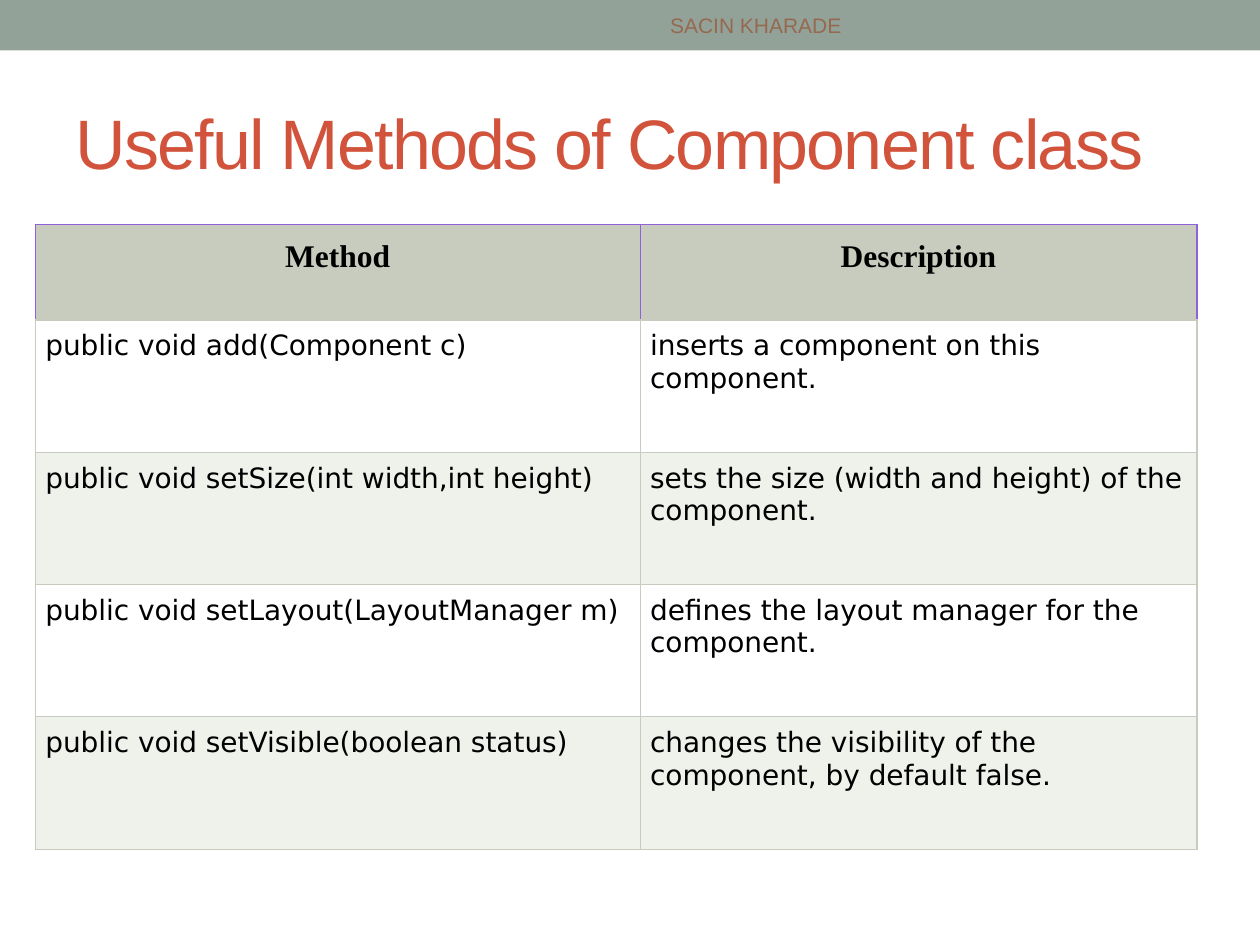
from lxml.etree import SubElement
from pptx import Presentation
from pptx.dml.color import RGBColor
from pptx.enum.shapes import MSO_SHAPE
from pptx.enum.text import MSO_ANCHOR, PP_ALIGN
from pptx.oxml.ns import qn
from pptx.util import Inches, Pt

SAGE = RGBColor(0x93, 0xA2, 0x99)
RED = RGBColor(0xD2, 0x53, 0x3C)
BROWN = RGBColor(0x96, 0x69, 0x4F)
BLACK = RGBColor(0x00, 0x00, 0x00)
WHITE = RGBColor(0xFF, 0xFF, 0xFF)
HEADER_FILL = RGBColor(0xC7, 0xCC, 0xBE)
BAND_FILL = RGBColor(0xEF, 0xF1, 0xEB)
PURPLE = RGBColor(0x90, 0x61, 0xD9)

METHODS = [
    ("Method", "Description"),
    ("public void add(Component c)", "inserts a component on this component."),
    ("public void setSize(int width,int height)",
     "sets the size (width and height) of the component."),
    ("public void setLayout(LayoutManager m)",
     "defines the layout manager for the component."),
    ("public void setVisible(boolean status)",
     "changes the visibility of the component, by default false."),
]
COLUMN_WIDTHS = (4.8, 4.42)
HEADER_HEIGHT, ROW_HEIGHT = 0.76, 1.05


def write_text(text_frame, text, font="Arial", size=16, color=BLACK,
               bold=False, align=PP_ALIGN.LEFT, spacing=None):
    paragraph = text_frame.paragraphs[0]
    paragraph.alignment = align
    run = paragraph.add_run()
    run.text = text
    run.font.name = font
    run.font.size = Pt(size)
    run.font.bold = bold
    run.font.color.rgb = color
    if spacing is not None:
        run.font._element.set("spc", str(int(spacing * 100)))


def add_band(slide, left, top, width, height, color):
    band = slide.shapes.add_shape(MSO_SHAPE.RECTANGLE, Inches(left), Inches(top),
                                  Inches(width), Inches(height))
    band.shadow.inherit = False
    band.fill.solid()
    band.fill.fore_color.rgb = color
    band.line.fill.background()


def add_label(slide, text, left, top, width, height, **text_format):
    box = slide.shapes.add_textbox(Inches(left), Inches(top),
                                   Inches(width), Inches(height))
    box.text_frame.word_wrap = True
    box.text_frame.vertical_anchor = MSO_ANCHOR.MIDDLE
    write_text(box.text_frame, text, **text_format)


def set_borders(cell, side_color, top_color, bottom_color):
    # Borders must come before the fill in the cell properties
    properties = cell._tc.get_or_add_tcPr()
    colors = {"a:lnL": side_color, "a:lnR": side_color,
              "a:lnT": top_color, "a:lnB": bottom_color}
    for tag, color in colors.items():
        line = SubElement(properties, qn(tag), w=str(Pt(0.75)))
        fill = SubElement(line, qn("a:solidFill"))
        SubElement(fill, qn("a:srgbClr"), val=str(color))


def format_cell(cell, text, fill, margin, side_color, top_color, **text_format):
    set_borders(cell, side_color, top_color, HEADER_FILL)
    cell.fill.solid()
    cell.fill.fore_color.rgb = fill
    cell.margin_left = cell.margin_right = Inches(margin)
    cell.margin_top = cell.margin_bottom = Inches(margin)
    write_text(cell.text_frame, text, **text_format)


def add_method_table(slide, left, top):
    height = HEADER_HEIGHT + ROW_HEIGHT * (len(METHODS) - 1)
    table = slide.shapes.add_table(
        len(METHODS), len(COLUMN_WIDTHS), Inches(left), Inches(top),
        Inches(sum(COLUMN_WIDTHS)), Inches(height)).table
    for column, width in zip(table.columns, COLUMN_WIDTHS):
        column.width = Inches(width)
    for row_index, texts in enumerate(METHODS):
        is_header = row_index == 0
        table.rows[row_index].height = Inches(HEADER_HEIGHT if is_header else ROW_HEIGHT)
        for column_index, text in enumerate(texts):
            cell = table.cell(row_index, column_index)
            if is_header:
                format_cell(cell, text, HEADER_FILL, 0.12, PURPLE, PURPLE,
                            font="Times New Roman", size=18, bold=True,
                            align=PP_ALIGN.CENTER)
            else:
                fill = WHITE if row_index % 2 else BAND_FILL
                format_cell(cell, text, fill, 0.08, HEADER_FILL, HEADER_FILL,
                            font="DejaVu Sans")


def main():
    presentation = Presentation()
    presentation.slide_width = Inches(10)
    presentation.slide_height = Inches(7.5)
    slide = presentation.slides.add_slide(presentation.slide_layouts[6])

    # Top band with the author's name
    add_band(slide, 0, 0, 10, 0.4, SAGE)
    add_label(slide, "SACIN KHARADE", 5.22, 0.02, 3, 0.36, size=12, color=BROWN)

    # Title
    add_label(slide, "Useful Methods of Component class", 0.5, 0.58, 9, 1.08,
              size=40, color=RED, spacing=-1)

    # Table of methods
    add_method_table(slide, 0.28, 1.78)

    presentation.save("out.pptx")


if __name__ == "__main__":
    main()
